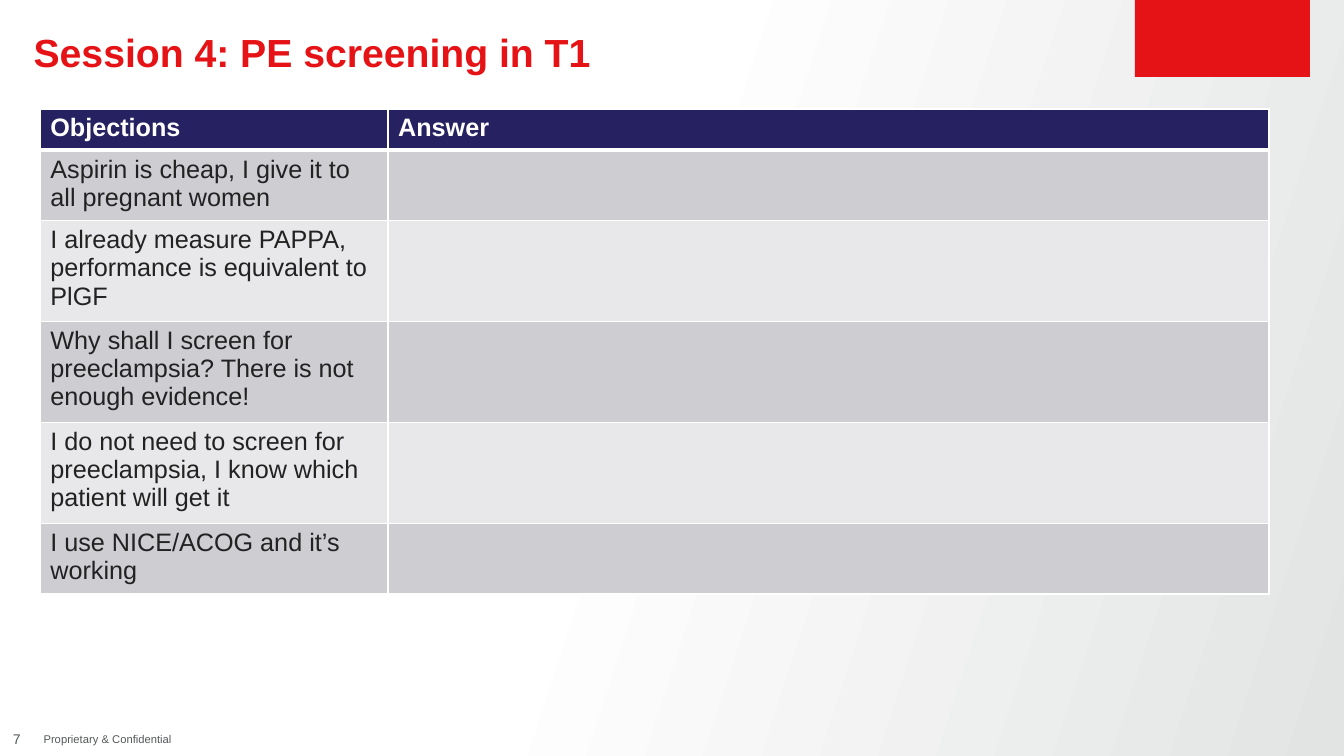
"""Build the slide of objections to PE screening in T1."""
from lxml.etree import SubElement
from pptx import Presentation
from pptx.dml.color import RGBColor
from pptx.enum.shapes import MSO_SHAPE
from pptx.enum.text import MSO_ANCHOR, MSO_AUTO_SIZE, PP_ALIGN
from pptx.oxml.ns import qn
from pptx.util import Pt

TITLE = "Session 4: PE screening in T1"
HEADERS = ("Objections", "Answer")
OBJECTIONS = [
    ("Aspirin is cheap, I give it to all pregnant women", 2),
    ("I already measure PAPPA, performance is equivalent to PlGF", 3),
    ("Why shall I screen for preeclampsia? There is not enough evidence!", 3),
    ("I do not need to screen for preeclampsia, I know which patient will get it", 3),
    ("I use NICE/ACOG and it’s working", 2),
]
FOOTERS = [
    ("7", 0, 24, 10, PP_ALIGN.CENTER, 0),
    ("Proprietary & Confidential", 24, 353.5, 8, PP_ALIGN.LEFT, 7.2),
]
COLORS = {
    "red": "E61316", "navy": "262160", "white": "FFFFFF", "ink": "222222",
    "gray": "545859", "band_dark": "CDCDD2", "band_light": "E8E8EA", "bg_end": "E2E3E3",
}
COL_WIDTHS = (248.4, 629.3)
HEADER_H, LINE_H, CELL_PAD = 29.5, 20.25, 7.2


def rgb(name):
    return RGBColor.from_string(COLORS[name])


def style(p, size, color, bold=False):
    p.font.name = "Arial"
    p.font.size = Pt(size)
    p.font.bold = bold
    p.font.color.rgb = rgb(color)


def set_margins(tf, side, edge=0):
    tf.margin_left = tf.margin_right = Pt(side)
    tf.margin_top = tf.margin_bottom = Pt(edge)


def set_borders(cell, top, bottom):
    tc_pr = cell._tc.get_or_add_tcPr()
    for tag, width in (("lnL", 1), ("lnR", 1), ("lnT", top), ("lnB", bottom)):
        ln = SubElement(tc_pr, qn(f"a:{tag}"), w=str(Pt(width)))
        fill = SubElement(ln, qn("a:solidFill"))
        SubElement(fill, qn("a:srgbClr"), val=COLORS["white"])


prs = Presentation()
prs.slide_width, prs.slide_height = Pt(960), Pt(540)
slide = prs.slides.add_slide(prs.slide_layouts[5])

bg = slide.background.fill
bg.gradient()
bg.gradient_angle = 342
for stop, position, color in zip(bg.gradient_stops, (0.45, 1), ("white", "bg_end")):
    stop.position = position
    stop.color.rgb = rgb(color)

sp = slide.shapes.add_shape(MSO_SHAPE.RECTANGLE, Pt(810.7), 0, Pt(125), Pt(55))
sp.shadow.inherit = False
sp.fill.solid()
sp.fill.fore_color.rgb = rgb("red")
sp.line.fill.background()

title = slide.shapes.title
title.left, title.top, title.width, title.height = Pt(24), Pt(24), Pt(768), Pt(30)
tf = title.text_frame
tf.text = TITLE
tf.auto_size = MSO_AUTO_SIZE.NONE
tf.vertical_anchor = MSO_ANCHOR.TOP
set_margins(tf, 0)
p = tf.paragraphs[0]
p.alignment = PP_ALIGN.LEFT
p.line_spacing = 0.9
style(p, 28, "red", True)

for text, left, width, size, align, side in FOOTERS:
    tf = slide.shapes.add_textbox(Pt(left), Pt(516), Pt(width), Pt(24)).text_frame
    tf.word_wrap = True
    tf.vertical_anchor = MSO_ANCHOR.MIDDLE
    set_margins(tf, side)
    p = tf.paragraphs[0]
    p.text = text
    p.alignment = align
    style(p, size, "gray")

rows = [HEADERS] + [(text, "") for text, _ in OBJECTIONS]
heights = [HEADER_H] + [CELL_PAD + LINE_H * lines for _, lines in OBJECTIONS]
table = slide.shapes.add_table(len(rows), len(HEADERS), Pt(28.8), Pt(77.8),
                               Pt(sum(COL_WIDTHS)), Pt(sum(heights))).table
for col, width in zip(table.columns, COL_WIDTHS):
    col.width = Pt(width)
for r, (row, height) in enumerate(zip(rows, heights)):
    table.rows[r].height = Pt(height)
    band = "navy" if r == 0 else ("band_light", "band_dark")[r % 2]
    for c, text in enumerate(row):
        cell = table.cell(r, c)
        set_borders(cell, 3 if r == 1 else 1, 3 if r == 0 else 1)
        cell.fill.solid()
        cell.fill.fore_color.rgb = rgb(band)
        cell.text = text
        style(cell.text_frame.paragraphs[0], 18, "ink" if r else "white", r == 0)

prs.save("out.pptx")
